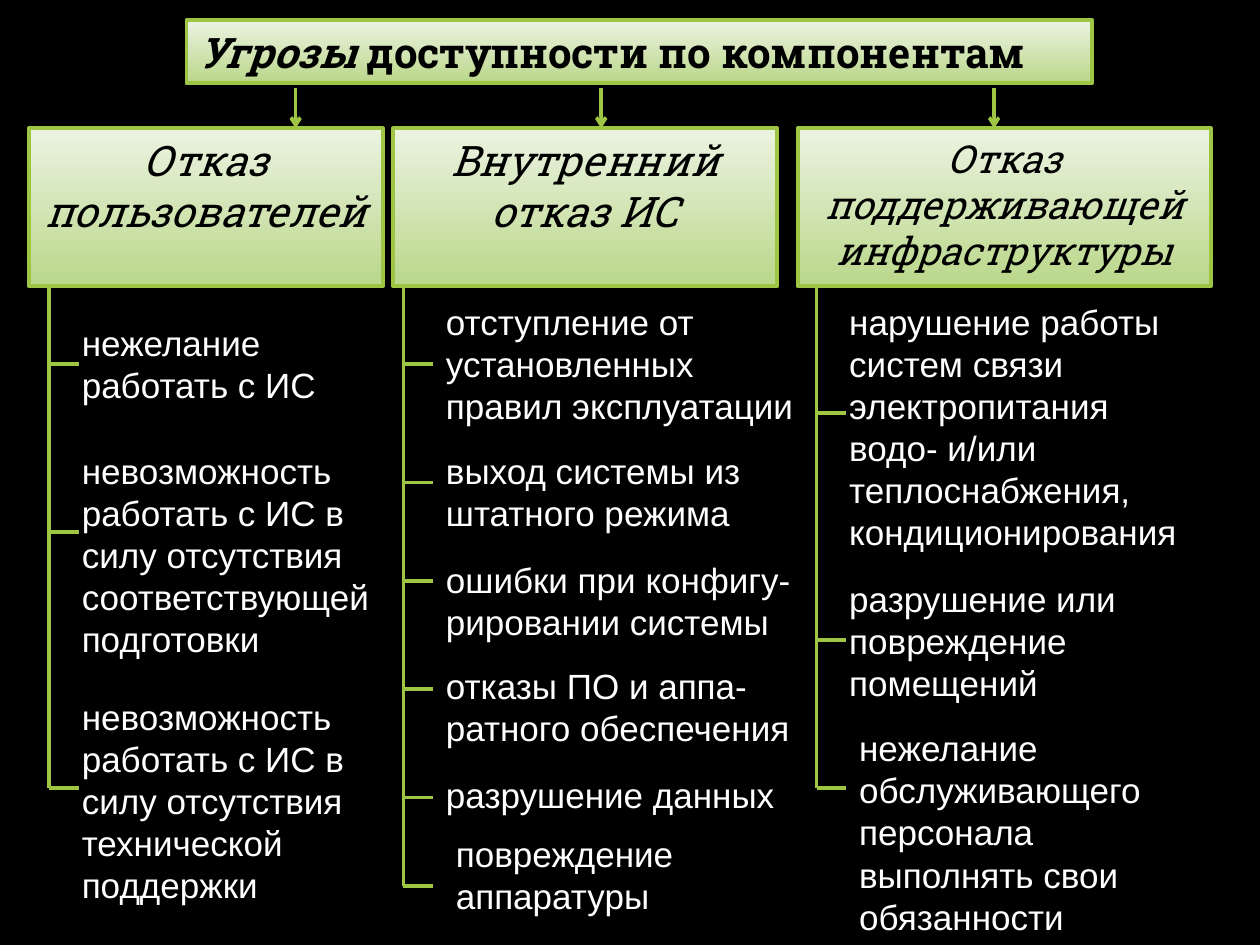
from dataclasses import dataclass

from lxml import etree
from pptx import Presentation
from pptx import util as u
from pptx.dml.color import RGBColor
from pptx.enum import shapes, text
from pptx.oxml.ns import qn

BLACK, WHITE, GREEN = "000000", "FFFFFF", "9EC544"
PANEL_SHADES = ("EBF3E1", "BAD78A")
HEADING = {"name": "Roboto Slab", "italic": True}
BODY = {"name": "Arial", "size": u.Pt(20)}
HEADER_TOP, HEADER_HEIGHT = 2.59, 3.18
TICK_LENGTH = 0.6
LINE_HEIGHT, BOX_PADDING = 0.85, 0.26


@dataclass
class Item:
    """A threat: its text, place and line count, and the height of its branch."""
    paras: list[str]
    top: float
    lines: int
    tick: float
    indent: float = 0
    widen: float = 0


@dataclass
class Column:
    title: str
    title_size: int
    left: float
    width: float
    arrow: float
    trunk: float
    text_left: float
    text_width: float
    items: list[Item]


COLUMNS = [
    Column("Отказ пользователей", 24, 0.58, 7.14, 5.96, 0.99, 1.4, 6.35, [
        Item(["нежелание работать с ИС"], 6.35, 2, 7.34),
        Item(["невозможность работать с ИС в силу отсутствия "
              "соответствующей подготовки"], 8.94, 5, 10.72, widen=0.2),
        Item(["невозможность работать с ИС в силу отсутствия "
              "технической поддержки"], 13.89, 5, 15.88),
    ]),
    Column("Внутренний отказ ИС", 24, 7.92, 7.75, 12.12, 8.13, 8.74, 7.54, [
        Item(["отступление от установленных правил эксплуатации"], 5.94, 3, 7.34),
        Item(["выход системы из штатного режима"], 8.94, 2, 9.73),
        Item(["ошибки при конфигу-рировании системы"], 11.13, 2, 11.71),
        Item(["отказы ПО и аппа-ратного обеспечения"], 13.28, 2, 13.89),
        Item(["разрушение данных"], 15.47, 1, 16.08),
        Item(["повреждение аппаратуры"], 16.66, 2, 17.86, indent=0.2),
    ]),
    Column("Отказ поддерживающей инфраструктуры", 22,
           16.08, 8.33, 20.04, 16.46, 16.87, 7.34, [
        Item(["нарушение работы", "систем связи", "электропитания",
              "водо- и/или теплоснабжения, кондиционирования"], 5.94, 6, 8.33),
        Item(["разрушение или повреждение помещений"], 11.51, 3, 12.9),
        Item(["нежелание обслуживающего персонала",
              "выполнять свои обязанности"], 14.53, 5, 15.88,
             indent=0.2, widen=-0.2),
    ]),
]


def color(value: str) -> RGBColor:
    return RGBColor.from_string(value)


def add_span(para, content: str, tint: str, formats: dict) -> None:
    span = para.add_run()
    span.text = content
    span.font.color.rgb = color(tint)
    for name, value in formats.items():
        setattr(span.font, name, value)


def add_panel(page, left: float, top: float, width: float, height: float):
    """Draw a green gradient panel and return its text frame."""
    box = page.shapes.add_shape(shapes.MSO_SHAPE.RECTANGLE,
                                *map(u.Cm, (left, top, width, height)))
    box.shadow.inherit = False
    box.fill.gradient()
    box.fill.gradient_angle = 270
    for stop, shade in zip(box.fill.gradient_stops, PANEL_SHADES):
        stop.color.rgb = color(shade)
    box.line.color.rgb = color(GREEN)
    box.line.width = u.Pt(2.25)
    frame = box.text_frame
    frame.word_wrap = True
    frame.vertical_anchor = text.MSO_ANCHOR.TOP
    return frame


def add_line(page, x1: float, y1: float, x2: float, y2: float,
             arrow: bool = False) -> None:
    line = page.shapes.add_connector(shapes.MSO_CONNECTOR.STRAIGHT,
                                     *map(u.Cm, (x1, y1, x2, y2)))
    line.line.color.rgb = color(GREEN)
    line.line.width = u.Pt(2)
    if arrow:
        outline = line._element.spPr.find(qn("a:ln"))
        etree.SubElement(outline, qn("a:tailEnd"), type="arrow")
    etree.SubElement(line._element.spPr, qn("a:effectLst"))


def add_item(page, column: Column, item: Item) -> None:
    add_line(page, column.trunk, item.tick, column.trunk + TICK_LENGTH, item.tick)
    box = page.shapes.add_textbox(
        u.Cm(column.text_left + item.indent), u.Cm(item.top),
        u.Cm(column.text_width + item.widen),
        u.Cm(BOX_PADDING + LINE_HEIGHT * item.lines))
    frame = box.text_frame
    frame.word_wrap = True
    for index, content in enumerate(item.paras):
        para = frame.add_paragraph() if index else frame.paragraphs[0]
        add_span(para, content, WHITE, BODY)


def add_column(page, column: Column) -> None:
    add_line(page, column.arrow, 1.78, column.arrow, HEADER_TOP, arrow=True)
    frame = add_panel(page, column.left, HEADER_TOP, column.width, HEADER_HEIGHT)
    para = frame.paragraphs[0]
    para.alignment = text.PP_ALIGN.CENTER
    add_span(para, column.title, BLACK,
             {**HEADING, "size": u.Pt(column.title_size)})
    # Trunk reaches down to the last branch
    add_line(page, column.trunk, HEADER_TOP + HEADER_HEIGHT,
             column.trunk, column.items[-1].tick)
    for item in column.items:
        add_item(page, column, item)


def main() -> None:
    deck = Presentation()
    deck.slide_width, deck.slide_height = u.Cm(25.4), u.Cm(19.05)
    page = deck.slides.add_slide(deck.slide_layouts[6])
    page.background.fill.solid()
    page.background.fill.fore_color.rgb = color(BLACK)

    # Title
    frame = add_panel(page, 3.76, 0.41, 18.26, 1.27)
    para = frame.paragraphs[0]
    para.alignment = text.PP_ALIGN.LEFT
    title = {**HEADING, "size": u.Pt(24), "bold": True}
    add_span(para, "Угрозы", BLACK, title)
    add_span(para, " доступности по компонентам", BLACK,
             {**title, "italic": False})

    # Threat groups
    for column in COLUMNS:
        add_column(page, column)

    deck.save("out.pptx")


if __name__ == "__main__":
    main()
